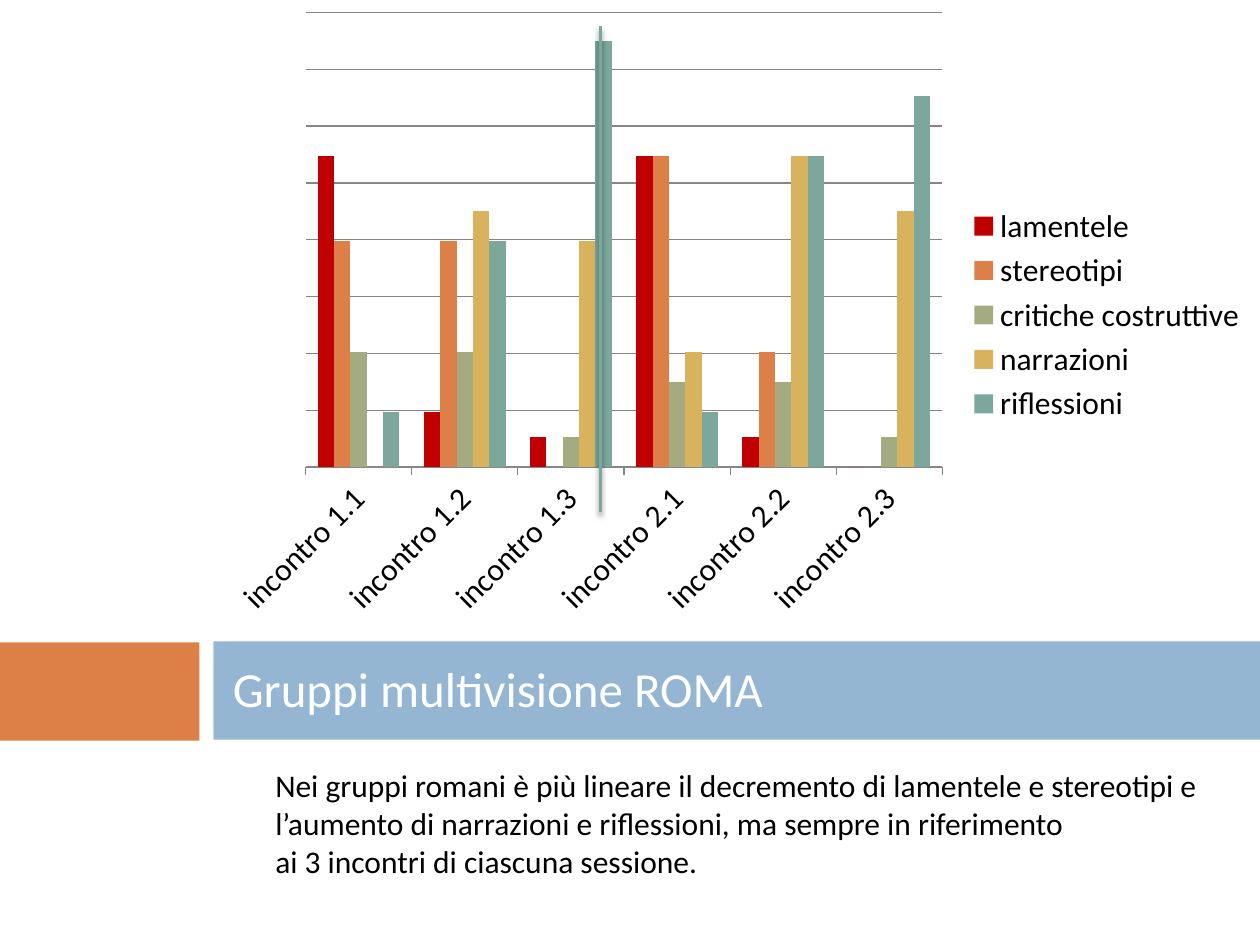
from dataclasses import dataclass

from lxml import etree
from pptx import Presentation
from pptx import util as u
from pptx.chart.data import CategoryChartData
from pptx.dml.color import RGBColor
from pptx.enum import chart as charts, shapes, text
from pptx.oxml import parse_xml
from pptx.oxml.ns import nsdecls, qn

WHITE = RGBColor(0xFF, 0xFF, 0xFF)
BLACK = RGBColor(0, 0, 0)
GRID = RGBColor(0x86, 0x86, 0x86)
RED = RGBColor(0xC0, 0, 0)
ORANGE = RGBColor(0xDD, 0x80, 0x47)
BLUE = RGBColor(0x94, 0xB6, 0xD2)
GREEN = RGBColor(0xA5, 0xAB, 0x81)
GOLD = RGBColor(0xD8, 0xB2, 0x5C)
TEAL = RGBColor(0x7B, 0xA7, 0x9D)
FONT = "Calibri"
GRID_STEP = 13.33
GRID_COUNT = 8


@dataclass
class Area:
    left: float
    top: float
    width: float
    height: float


@dataclass
class Band(Area):
    color: RGBColor


@dataclass
class Series:
    name: str
    values: tuple[int, ...]
    color: RGBColor


BANDS = [
    Band(-0.03, 12.95, 4.07, 1.98, ORANGE),
    Band(4.3, 12.93, 21.1, 1.98, BLUE),
    Band(4.02, 0, 0.28, 19.05, WHITE),
]
CHART = Area(4.34, 0, 21.06, 12.7)
PLOT = Area(6.16, 0.25, 12.84, 9.17)
MEETINGS = [f"incontro {session}.{number}" for session in (1, 2) for number in (1, 2, 3)]
SERIES = [
    Series("lamentele", (73, 13, 7, 73, 7, 0), RED),
    Series("stereotipi", (53, 53, 0, 73, 27, 0), ORANGE),
    Series("critiche costruttive", (27, 27, 7, 20, 20, 7), GREEN),
    Series("narrazioni", (0, 60, 53, 27, 73, 60), GOLD),
    Series("riflessioni", (13, 53, 100, 13, 73, 87), TEAL),
]
COMMENT = [
    "Nei gruppi romani è più lineare il decremento di lamentele e stereotipi e "
    "l’aumento di narrazioni e riflessioni, ma sempre in riferimento",
    "ai 3 incontri di ciascuna sessione.",
]


def lengths(area: Area) -> list[u.Length]:
    return [u.Cm(side) for side in (area.left, area.top, area.width, area.height)]


def style_font(font, size: float, color: RGBColor) -> None:
    font.name = FONT
    font.size = u.Pt(size)
    font.color.rgb = color


def add_span(para, words: str, size: float, color: RGBColor) -> None:
    span = para.add_run()
    span.text = words
    style_font(span.font, size, color)


def add_band(page, band: Band) -> None:
    box = page.shapes.add_shape(shapes.MSO_SHAPE.RECTANGLE, *lengths(band))
    box.shadow.inherit = False
    box.fill.solid()
    box.fill.fore_color.rgb = band.color
    box.line.fill.background()


def set_title(page, words: str) -> None:
    title = page.shapes.title
    title.left, title.top, title.width, title.height = lengths(Area(4.44, 12.91, 20.32, 1.91))
    frame = title.text_frame
    frame.vertical_anchor = text.MSO_ANCHOR.MIDDLE
    para = frame.paragraphs[0]
    para.alignment = text.PP_ALIGN.LEFT
    add_span(para, words, 28, WHITE)
    # Bring the title in front of the bands
    page.shapes.element.append(title.element)


def set_plot_area(chart, plot: Area) -> None:
    """Fix the inner plot area, given in slide centimetres."""
    plot_area = chart.plots[0]._element.getparent()
    for old in plot_area.findall(qn("c:layout")):
        plot_area.remove(old)
    layout = etree.Element(qn("c:layout"))
    manual = etree.SubElement(layout, qn("c:manualLayout"))
    settings = {
        "layoutTarget": "inner", "xMode": "edge", "yMode": "edge",
        "x": (plot.left - CHART.left) / CHART.width,
        "y": (plot.top - CHART.top) / CHART.height,
        "w": plot.width / CHART.width,
        "h": plot.height / CHART.height,
    }
    for tag, value in settings.items():
        etree.SubElement(manual, qn(f"c:{tag}")).set("val", str(value))
    plot_area.insert(0, layout)


def add_meeting_chart(page) -> None:
    data = CategoryChartData()
    data.categories = MEETINGS
    for series in SERIES:
        data.add_series(series.name, series.values)
    chart = page.shapes.add_chart(
        charts.XL_CHART_TYPE.COLUMN_CLUSTERED, *lengths(CHART), data).chart
    style_font(chart.font, 18, BLACK)
    chart.has_title = False
    chart.has_legend = True
    chart.legend.position = charts.XL_LEGEND_POSITION.RIGHT
    chart.legend.include_in_layout = False

    plot = chart.plots[0]
    plot.gap_width = 150
    plot.overlap = 0
    plot.vary_by_categories = False
    for drawn, series in zip(plot.series, SERIES):
        drawn.format.fill.solid()
        drawn.format.fill.fore_color.rgb = series.color

    value_axis = chart.value_axis
    value_axis.visible = False
    value_axis.minimum_scale = 0
    value_axis.maximum_scale = GRID_STEP * GRID_COUNT
    value_axis.major_unit = GRID_STEP
    value_axis.has_major_gridlines = True
    category_axis = chart.category_axis
    category_axis.major_tick_mark = charts.XL_TICK_MARK.OUTSIDE
    style_font(category_axis.tick_labels.font, 18, BLACK)
    category_axis._element.find(qn("c:txPr")).find(qn("a:bodyPr")).set("rot", "-2700000")
    for line in (value_axis.major_gridlines.format.line, category_axis.format.line):
        line.color.rgb = GRID
        line.width = u.Pt(0.75)
    set_plot_area(chart, PLOT)


def add_session_divider(page) -> None:
    divider = page.shapes.add_connector(
        shapes.MSO_CONNECTOR.STRAIGHT, u.Cm(12.1), u.Cm(0.53), u.Cm(12.1), u.Cm(10.32))
    divider.line.color.rgb = TEAL
    divider.line.width = u.Pt(1.5)
    divider.element.spPr.append(parse_xml(
        f'<a:effectLst {nsdecls("a")}>'
        f'<a:outerShdw blurRad="{u.Pt(3)}" dist="{u.Pt(2.4)}" dir="5400000" rotWithShape="0">'
        '<a:srgbClr val="000000"><a:alpha val="45000"/></a:srgbClr>'
        '</a:outerShdw></a:effectLst>'))


def add_comment(page) -> None:
    box = page.shapes.add_textbox(*lengths(Area(5.3, 15.32, 20.1, 2.57)))
    frame = box.text_frame
    frame.word_wrap = True
    frame.auto_size = text.MSO_AUTO_SIZE.SHAPE_TO_FIT_TEXT
    for index, words in enumerate(COMMENT):
        para = frame.add_paragraph() if index else frame.paragraphs[0]
        add_span(para, words, 18, BLACK)


def main() -> None:
    deck = Presentation()
    deck.slide_width, deck.slide_height = u.Cm(25.4), u.Cm(19.05)
    page = deck.slides.add_slide(deck.slide_layouts[5])

    # Coloured bands and title
    for band in BANDS:
        add_band(page, band)
    set_title(page, "Gruppi multivisione ROMA")

    # Chart with the line between the two sessions
    add_meeting_chart(page)
    add_session_divider(page)

    # Comment below
    add_comment(page)
    deck.save("out.pptx")


if __name__ == "__main__":
    main()
